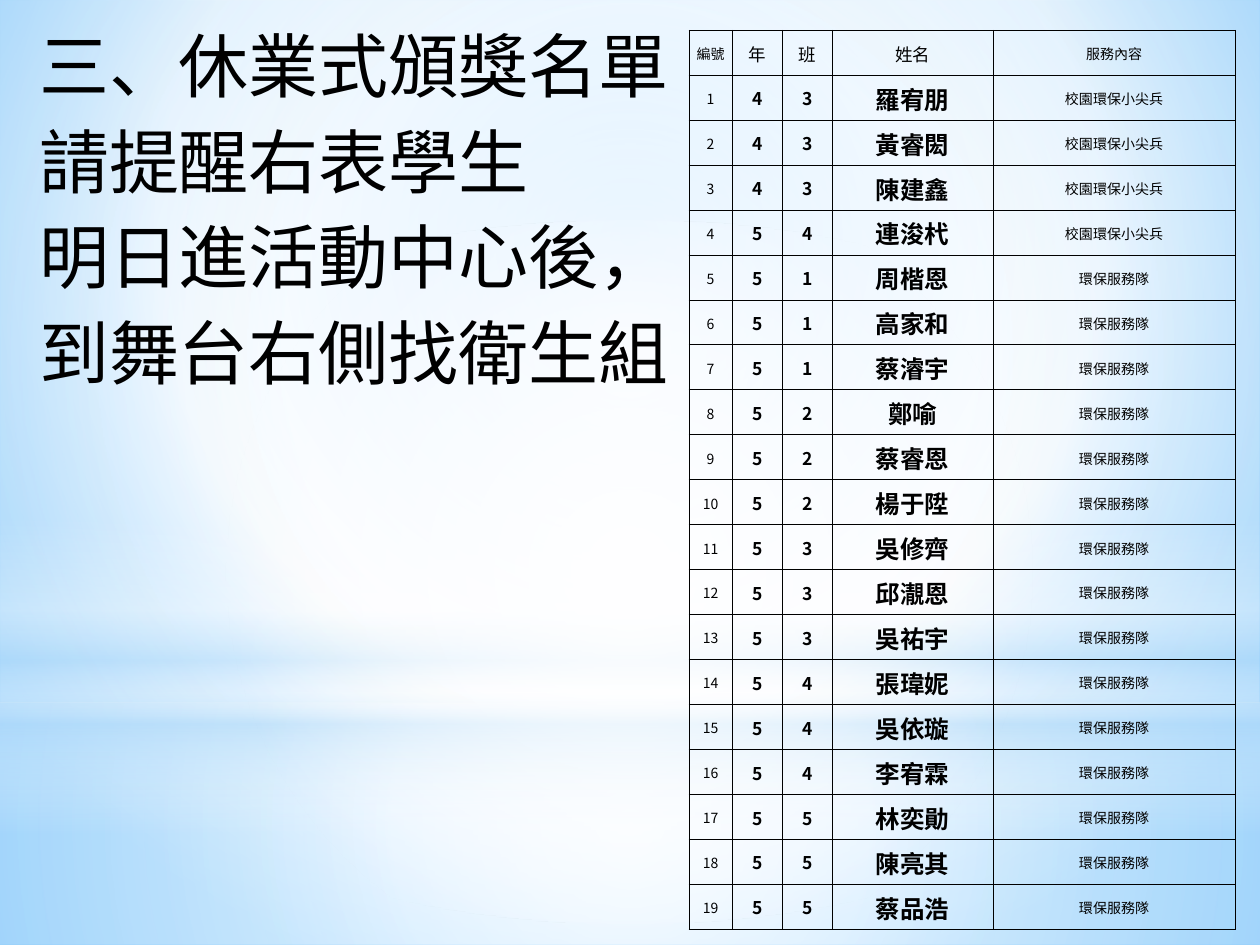
from lxml.etree import SubElement
from pptx import Presentation
from pptx.dml.color import RGBColor
from pptx.enum.shapes import MSO_SHAPE
from pptx.enum.text import MSO_ANCHOR, PP_ALIGN
from pptx.oxml import parse_xml
from pptx.oxml.ns import nsdecls, qn
from pptx.util import Cm, Pt

FONT = "Noto Sans CJK SC"
BLACK = "000000"


def set_gradient(fill, element, stops, focus=None):
    """Stops are (position %, colour, opacity %); focus is the circle's l, t, r, b
    in %, and without it the gradient runs from top to bottom."""
    fill.gradient()
    gradient = element.find(".//" + qn("a:gradFill"))
    for child in list(gradient):
        gradient.remove(child)
    stop_list = SubElement(gradient, qn("a:gsLst"))
    for position, colour, opacity in stops:
        stop = SubElement(stop_list, qn("a:gs"), pos=str(position * 1000))
        tint = SubElement(stop, qn("a:srgbClr"), val=colour)
        if opacity < 100:
            SubElement(tint, qn("a:alpha"), val=str(opacity * 1000))
    if focus:
        circle = SubElement(gradient, qn("a:path"), path="circle")
        edges = {side: str(value * 1000) for side, value in zip("ltrb", focus)}
        SubElement(circle, qn("a:fillToRect"), **edges)
    else:
        SubElement(gradient, qn("a:lin"), ang="5400000", scaled="0")


def format_runs(paragraph, size, bold=False):
    for run in paragraph.runs:
        run.font.size = Pt(size)
        run.font.bold = bold
        run.font.color.rgb = RGBColor.from_string(BLACK)
        run.font.name = FONT
        SubElement(run.font._element, qn("a:ea"), typeface=FONT)


prs = Presentation()
prs.slide_width, prs.slide_height = Cm(25.4), Cm(19.05)
slide = prs.slides.add_slide(prs.slide_layouts[6])

# Sky background with soft light layers
set_gradient(slide.background.fill, slide._element,
             [(0, "9ED5FF", 100), (60, "FFFFFF", 100), (100, "5BB9FF", 100)],
             (20, 10, 20, 60))

CENTRE = (50, 50, 50, 50)
light_layers = [
    (MSO_SHAPE.RECTANGLE, 14.17, 4.88, CENTRE,
     [(0, "FFFFFF", 91), (37, "FFFFFF", 76), (100, "B4DCFA", 79)]),
    (MSO_SHAPE.RECTANGLE, 0, 14.17, CENTRE,
     [(0, "FFFFFF", 89), (48, "FFFFFF", 62), (100, "B4DCFA", 79)]),
    (MSO_SHAPE.RECTANGLE, 10.46, 6.35, None,
     [(0, "FFFFFF", 0), (29, "FFFFFF", 30), (45, "B4DCFA", 40),
      (55, "FFFFFF", 26), (65, "B4DCFA", 60), (100, "FFFFFF", 0)]),
    (MSO_SHAPE.OVAL, 4.45, 14.17, CENTRE,
     [(0, "FFFFFF", 100), (56, "FFFFFF", 0)]),
]
for outline, top, height, focus, stops in light_layers:
    layer = slide.shapes.add_shape(outline, 0, Cm(top), prs.slide_width, Cm(height))
    layer.shadow.inherit = False
    layer.line.fill.background()
    set_gradient(layer.fill, layer._element, stops, focus)

# Announcement
announcement = slide.shapes.add_textbox(Cm(0.51), Cm(0.53), Cm(24.41), Cm(18.21)).text_frame
announcement.word_wrap = True
announcement.text = "三、休業式頒獎名單\n請提醒右表學生\n明日進活動中心後，\n到舞台右側找衛生組"
for line in announcement.paragraphs:
    line.line_spacing = 0.9
    line.space_after = Pt(11.3)
    indents = line._p.get_or_add_pPr()
    indents.set("marL", str(Cm(0.97)))
    indents.set("indent", str(Cm(-0.94)))
    format_runs(line, 40)

# Award list
GREEN_SCOUT, GREEN_TEAM = "校園環保小尖兵", "環保服務隊"
students = [
    (4, 3, "羅宥朋"), (4, 3, "黃睿閎"), (4, 3, "陳建鑫"), (5, 4, "連浚杙"),
    (5, 1, "周楷恩"), (5, 1, "高家和"), (5, 1, "蔡濬宇"), (5, 2, "鄭喻"),
    (5, 2, "蔡睿恩"), (5, 2, "楊于陞"), (5, 3, "吳修齊"), (5, 3, "邱㵾恩"),
    (5, 3, "吳祐宇"), (5, 4, "張瑋妮"), (5, 4, "吳依璇"), (5, 4, "李宥霖"),
    (5, 5, "林奕勛"), (5, 5, "陳亮其"), (5, 5, "蔡品浩"),
]
SCOUT_COUNT = 4
award_rows = [("編號", "年", "班", "姓名", "服務內容")]
for number, student in enumerate(students, 1):
    service = GREEN_SCOUT if number <= SCOUT_COUNT else GREEN_TEAM
    award_rows.append((number, *student, service))

column_widths = [0.87, 1.01, 1.01, 3.24, 4.88]
header_sizes = [8, 10, 10, 10, 8]
student_sizes = [8, 10, 10, 14, 8]
bold_columns = (1, 2, 3)

awards = slide.shapes.add_table(len(award_rows), len(column_widths), Cm(13.89), Cm(0.61),
                                Cm(sum(column_widths)), Cm(18.12)).table
awards.first_row = awards.horz_banding = False
for column, width in zip(awards.columns, column_widths):
    column.width = Cm(width)

for r, values in enumerate(award_rows):
    sizes = student_sizes if r else header_sizes
    for c, value in enumerate(values):
        cell = awards.cell(r, c)
        cell.text = str(value)
        cell.vertical_anchor = MSO_ANCHOR.MIDDLE
        cell.margin_left = cell.margin_right = cell.margin_top = Cm(0.03)
        cell.margin_bottom = 0
        cell.fill.background()
        paragraph = cell.text_frame.paragraphs[0]
        paragraph.alignment = PP_ALIGN.CENTER
        format_runs(paragraph, sizes[c], bold=r > 0 and c in bold_columns)
        for position, side in enumerate(("lnL", "lnR", "lnT", "lnB")):
            cell._tc.tcPr.insert(position, parse_xml(
                f'<a:{side} {nsdecls("a")} w="{Pt(0.5)}"><a:solidFill>'
                f'<a:srgbClr val="{BLACK}"/></a:solidFill></a:{side}>'))

prs.save("out.pptx")
